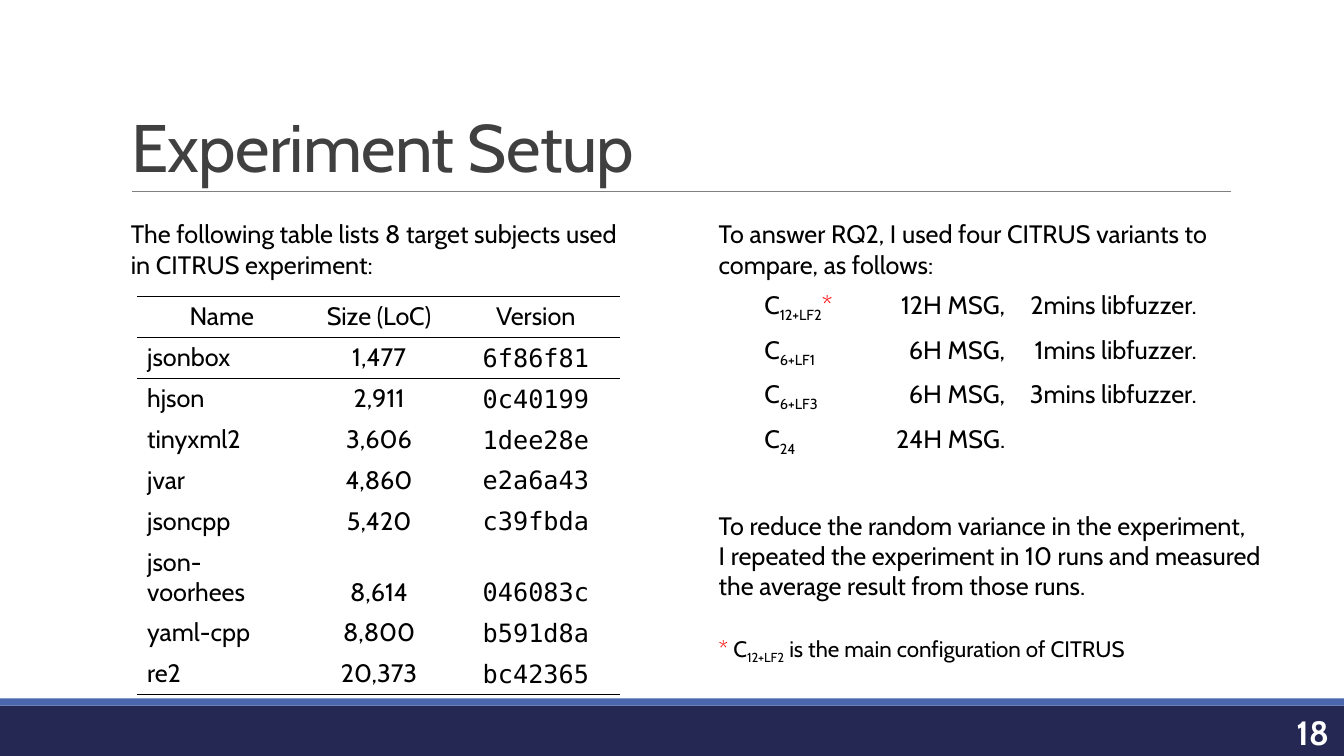
from lxml.etree import SubElement
from pptx import Presentation
from pptx.dml.color import RGBColor
from pptx.enum.shapes import MSO_CONNECTOR, MSO_SHAPE
from pptx.enum.text import MSO_ANCHOR as Anchor, MSO_AUTO_SIZE as AutoSize, PP_ALIGN as Align
from pptx.oxml.ns import qn
from pptx.util import Inches, Pt

BLACK = RGBColor(0x00, 0x00, 0x00)
WHITE = RGBColor(0xFF, 0xFF, 0xFF)
RED = RGBColor(0xFF, 0x00, 0x00)
CHARCOAL = RGBColor(0x40, 0x40, 0x40)
GRAY = RGBColor(0x80, 0x80, 0x80)
NAVY = RGBColor(0x24, 0x28, 0x52)
BLUE = RGBColor(0x4A, 0x66, 0xAC)

COLUMNS, ROWS = 133.3, 75
PLAIN_TABLE = "{2D5ABB26-0587-4C30-8999-92F81FD0307C}"
MONO = {"name": "DejaVu Sans Mono"}
SUB = {"baseline": -25000}
STAR = {"color": RED}

SUBJECTS = [
    ("Name", "Size (LoC)", "Version"),
    ("jsonbox", "1,477", "6f86f81"),
    ("hjson", "2,911", "0c40199"),
    ("tinyxml2", "3,606", "1dee28e"),
    ("jvar", "4,860", "e2a6a43"),
    ("jsoncpp", "5,420", "c39fbda"),
    ("json-voorhees", "8,614", "046083c"),
    ("yaml-cpp", "8,800", "b591d8a"),
    ("re2", "20,373", "bc42365"),
]
VARIANTS = [
    ("12+LF2", "12H MSG,", "2mins libfuzzer."),
    ("6+LF1", "6H MSG,", "1mins libfuzzer."),
    ("6+LF3", "6H MSG,", "3mins libfuzzer."),
    ("24", "24H MSG.", ""),
]


class SlideBuilder:
    """Draws on one slide; places are columns and rows of a tenth of an inch."""

    base_font = {"name": "Cabin", "size": Pt(18), "color": BLACK}

    def __init__(self, deck):
        self.slide = deck.slides.add_slide(deck.slide_layouts[5])
        self.column = deck.slide_width / COLUMNS
        self.row = deck.slide_height / ROWS

    def place(self, left, top, width, height):
        return (round(left * self.column), round(top * self.row),
                round(width * self.column), round(height * self.row))

    def fill_text(self, frame, paragraphs, align=Align.LEFT, **font):
        """Fill a text frame; each paragraph is a list of (text, format) spans."""
        for index, spans in enumerate(paragraphs):
            para = frame.add_paragraph() if index else frame.paragraphs[0]
            para.alignment = align
            for text, extra in spans:
                span = para.add_run()
                span.text = text
                for key, value in (self.base_font | font | extra).items():
                    if key == "color":
                        span.font.color.rgb = value
                    elif key in ("baseline", "spc"):
                        span._r.get_or_add_rPr().set(key, str(value))
                    else:
                        setattr(span.font, key, value)

    def title(self, text, place):
        box = self.slide.shapes.title
        box.left, box.top, box.width, box.height = self.place(*place)
        frame = box.text_frame
        frame.auto_size = AutoSize.NONE
        frame.vertical_anchor = Anchor.BOTTOM
        self.fill_text(frame, [[(text, {})]], size=Pt(48), color=CHARCOAL, spc=-50)
        frame.paragraphs[0].line_spacing = 0.85

    def bar(self, place, color):
        bar = self.slide.shapes.add_shape(MSO_SHAPE.RECTANGLE, *self.place(*place))
        bar.shadow.inherit = False
        bar.fill.solid()
        bar.fill.fore_color.rgb = color
        bar.line.fill.background()

    def rule(self, left, right, top):
        x, y, width, _ = self.place(left, top, right - left, 0)
        rule = self.slide.shapes.add_connector(MSO_CONNECTOR.STRAIGHT, x, y, x + width, y)
        rule.line.color.rgb = GRAY
        rule.line.width = Pt(0.5)
        SubElement(rule.element.spPr, qn("a:effectLst"))

    def text(self, place, paragraphs, wrap=True, anchor=Anchor.TOP, **style):
        frame = self.slide.shapes.add_textbox(*self.place(*place)).text_frame
        frame.word_wrap = wrap
        frame.vertical_anchor = anchor
        self.fill_text(frame, paragraphs, **style)

    def table(self, left, top, widths, row_height, rows, aligns):
        """Add an unstyled table whose cells are lists of (text, format) spans."""
        place = self.place(left, top, sum(widths), row_height * len(rows))
        shape = self.slide.shapes.add_table(len(rows), len(widths), *place)
        for style in shape.element.iter(qn("a:tableStyleId")):
            style.text = PLAIN_TABLE
        table = shape.table
        table.first_row = table.horz_banding = False
        for column, width in zip(table.columns, widths):
            column.width = round(width * self.column)
        for row, content in zip(table.rows, rows):
            row.height = round(row_height * self.row)
            for cell, spans, align in zip(row.cells, content, aligns):
                self.fill_text(cell.text_frame, [spans], align)
                cell.fill.background()
        return table

    def border(self, cell, *sides):
        """Draw black one-point lines on the given sides, in the order lnT, lnB."""
        properties = cell._tc.get_or_add_tcPr()
        for index, side in enumerate(sides):
            line = properties.makeelement(qn(f"a:{side}"), {"w": str(Pt(1))})
            fill = SubElement(line, qn("a:solidFill"))
            SubElement(fill, qn("a:srgbClr"), val=str(BLACK))
            properties.insert(index, line)


def add_subjects(page):
    rows = [[[(name, {})], [(size, {})], [(version, MONO if index else {})]]
            for index, (name, size, version) in enumerate(SUBJECTS)]
    table = page.table(13.6, 29.4, (16.8, 14.4, 16.7), 4.06, rows,
                       (Align.LEFT, Align.CENTER, Align.CENTER))
    table.cell(0, 0).text_frame.paragraphs[0].alignment = Align.CENTER
    last = len(SUBJECTS) - 1
    for column in range(3):
        page.border(table.cell(0, column), "lnT", "lnB")
        page.border(table.cell(1, column), "lnT")
        page.border(table.cell(last, column), "lnB")
        for row in range(1, last + 1):
            table.cell(row, column).vertical_anchor = Anchor.BOTTOM


def add_variants(page):
    rows = []
    for index, (variant, generation, fuzzing) in enumerate(VARIANTS):
        star = [] if index else [("*", STAR)]
        rows.append([[("C", {}), (variant, SUB)] + star, [(generation, {})],
                     [(fuzzing, {})] if fuzzing else []])
    page.table(74.8, 28.3, (10.5, 15.4, 19), 4.06, rows,
               (Align.LEFT, Align.RIGHT, Align.RIGHT))


def main():
    deck = Presentation()
    deck.slide_width, deck.slide_height = Inches(13.33), Inches(7.5)
    page = SlideBuilder(deck)
    page.bar((0, 70, COLUMNS, 5), NAVY)
    page.bar((0, 69.3, COLUMNS, 0.7), BLUE)
    page.rule(13.1, 122.1, 19)
    page.title("Experiment Setup", (12, 3.1, 110, 15.9))
    page.text((118.5, 70.6, 14.3, 4), [[("18", {})]], anchor=Anchor.MIDDLE,
              align=Align.RIGHT, size=Pt(24), color=WHITE, bold=True)
    page.text((12, 21.2, 51, 7.1), [[(
        "The following table lists 8 target subjects used in CITRUS experiment:", {})]])
    add_subjects(page)
    page.text((70.3, 21.2, 51, 7.1), [[(
        "To answer RQ2, I used four CITRUS variants to compare, as follows:", {})]])
    add_variants(page)
    page.text((70.3, 50.1, 56.9, 10.1), [
        [("To reduce the random variance in the experiment,", {})],
        [("I repeated the experiment in 10 runs and measured "
          "the average result from those runs.", {})]])
    page.text((70.3, 62.5, 44.1, 3.7), [[
        ("* ", STAR), ("C", {}), ("12+LF2", SUB),
        (" is the main configuration of CITRUS", {})]], wrap=False, size=Pt(16))
    deck.save("out.pptx")


if __name__ == "__main__":
    main()
